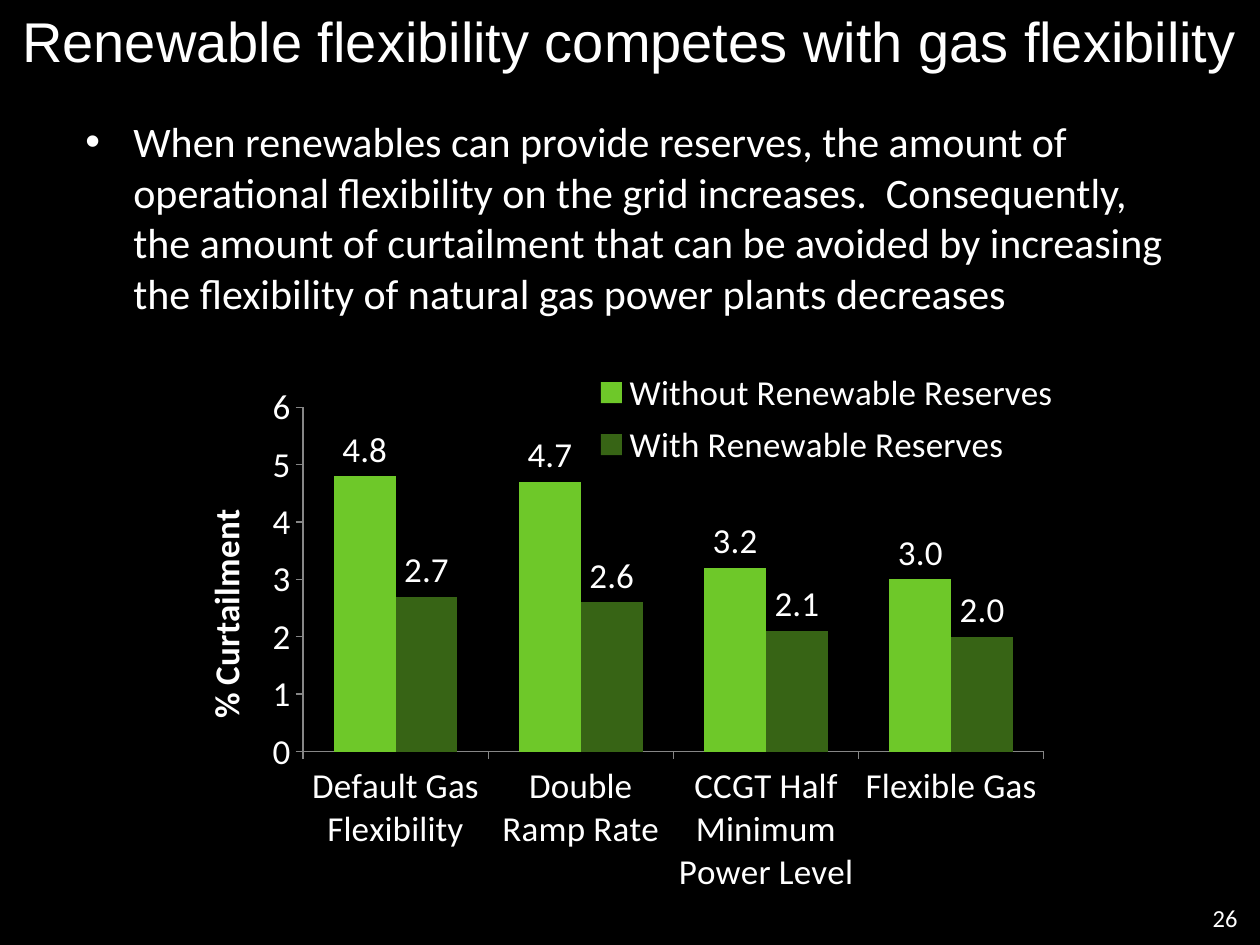
from lxml import etree
from pptx import Presentation, util as u
from pptx.chart.data import CategoryChartData
from pptx.dml.color import RGBColor
from pptx.enum import chart as ch, text as tx
from pptx.oxml.ns import qn

TITLE = "Renewable flexibility competes with gas flexibility"
POINT = (
    "When renewables can provide reserves, the amount of operational "
    "flexibility on the grid increases.  Consequently, the amount of "
    "curtailment that can be avoided by increasing the flexibility of "
    "natural gas power plants decreases"
)
PAGE = "26"
CASES = ["Default Gas Flexibility", "Double Ramp Rate",
         "CCGT Half Minimum Power Level", "Flexible Gas"]
SERIES = [
    ("Without Renewable Reserves", "6EC829", (4.8, 4.7, 3.2, 3.0)),
    ("With Renewable Reserves", "376415", (2.7, 2.6, 2.1, 2.0)),
]
THEME = {
    "back": "000000", "ink": "FFFFFF", "axis": "868686",
    "head": "Arial", "body": "Calibri",
    "title": 32, "point": 24, "chart": 20, "page": 14,
}


def color(name):
    return RGBColor.from_string(THEME.get(name, name))


def style(font, size, face="body"):
    font.name = THEME[face]
    font.size = u.Pt(THEME[size])
    font.color.rgb = color("ink")


def add_text(slide, words, box, size, face="body", align=tx.PP_ALIGN.LEFT,
             anchor=tx.MSO_ANCHOR.TOP):
    frame = slide.shapes.add_textbox(*map(u.Inches, box)).text_frame
    frame.word_wrap = True
    frame.vertical_anchor = anchor
    para = frame.paragraphs[0]
    para.text = words
    para.alignment = align
    style(para.font, size, face)
    return para


def add_bullet(para, indent):
    props = para._p.get_or_add_pPr()
    props.set("marL", str(u.Inches(indent)))
    props.set("indent", str(-u.Inches(indent)))
    # Bullet tags come before the default run properties.
    props.insert(0, props.makeelement(qn("a:buFont"), {"typeface": "Arial"}))
    props.insert(1, props.makeelement(qn("a:buChar"), {"char": "•"}))


def place(part, index, inner=False, **spots):
    """Give a chart part a manual layout, in fractions of the chart."""
    for old in part.findall(qn("c:layout")):
        part.remove(old)
    layout = part.makeelement(qn("c:layout"), {})
    part.insert(index, layout)
    manual = etree.SubElement(layout, qn("c:manualLayout"))
    rules = {"layoutTarget": "inner"} if inner else {}
    rules |= {"xMode": "edge", "yMode": "edge"} | spots
    for tag, val in rules.items():
        etree.SubElement(manual, qn("c:" + tag), val=str(val))


def add_bars(slide, box):
    data = CategoryChartData()
    data.categories = CASES
    for name, _, vals in SERIES:
        data.add_series(name, vals)
    chart = slide.shapes.add_chart(
        ch.XL_CHART_TYPE.COLUMN_CLUSTERED, *map(u.Inches, box), data).chart
    chart.has_title = False
    style(chart.font, "chart")

    plot = chart.plots[0]
    plot.gap_width, plot.overlap, plot.vary_by_categories = 100, 0, False
    for bars, (_, fill, _) in zip(plot.series, SERIES):
        bars.format.fill.solid()
        bars.format.fill.fore_color.rgb = color(fill)
        labels = bars.data_labels
        labels.show_value = True
        labels.number_format = "#,##0.0"
        labels.number_format_is_linked = False
        labels.position = ch.XL_LABEL_POSITION.OUTSIDE_END
        style(labels.font, "chart")

    for axis in (chart.category_axis, chart.value_axis):
        axis.has_major_gridlines = False
        axis.major_tick_mark = ch.XL_TICK_MARK.OUTSIDE
        axis.format.line.color.rgb = color("axis")
        style(axis.tick_labels.font, "chart")
    scale = chart.value_axis
    scale.minimum_scale, scale.maximum_scale, scale.major_unit = 0, 6, 1
    scale.tick_labels.number_format = "0"
    scale.tick_labels.number_format_is_linked = False

    frame = scale.axis_title.text_frame
    frame.text = "% Curtailment"
    font = frame.paragraphs[0].font
    style(font, "chart")
    font.bold = True
    frame._txBody.bodyPr.set("rot", "-5400000")
    frame._txBody.bodyPr.set("vert", "horz")

    chart.has_legend = True
    chart.legend.position = ch.XL_LEGEND_POSITION.TOP
    chart.legend.include_in_layout = False
    style(chart.legend.font, "chart")

    area = chart._chartSpace.chart.plotArea
    place(area, 0, inner=True, x=0.15, y=0.09, w=0.82, h=0.61)
    place(scale.axis_title._element, 1, x=0.03, y=0.26)
    place(chart.legend._element, 1, x=0.47, y=0.01, w=0.52, h=0.2)


def main():
    deck = Presentation()
    deck.slide_width, deck.slide_height = u.Inches(10), u.Inches(7.5)
    slide = deck.slides.add_slide(deck.slide_layouts[6])
    slide.background.fill.solid()
    slide.background.fill.fore_color.rgb = color("back")

    add_text(slide, TITLE, (0, 0, 10, 0.64), "title", "head",
             tx.PP_ALIGN.CENTER)
    point = add_text(slide, POINT, (0.58, 0.87, 8.92, 1.72), "point")
    add_bullet(point, 0.38)
    add_bars(slide, (1.33, 2.83, 7.17, 4.48))
    add_text(slide, PAGE, (9.42, 7.08, 0.5, 0.4), "page",
             align=tx.PP_ALIGN.RIGHT, anchor=tx.MSO_ANCHOR.MIDDLE)
    deck.save("out.pptx")


if __name__ == "__main__":
    main()
